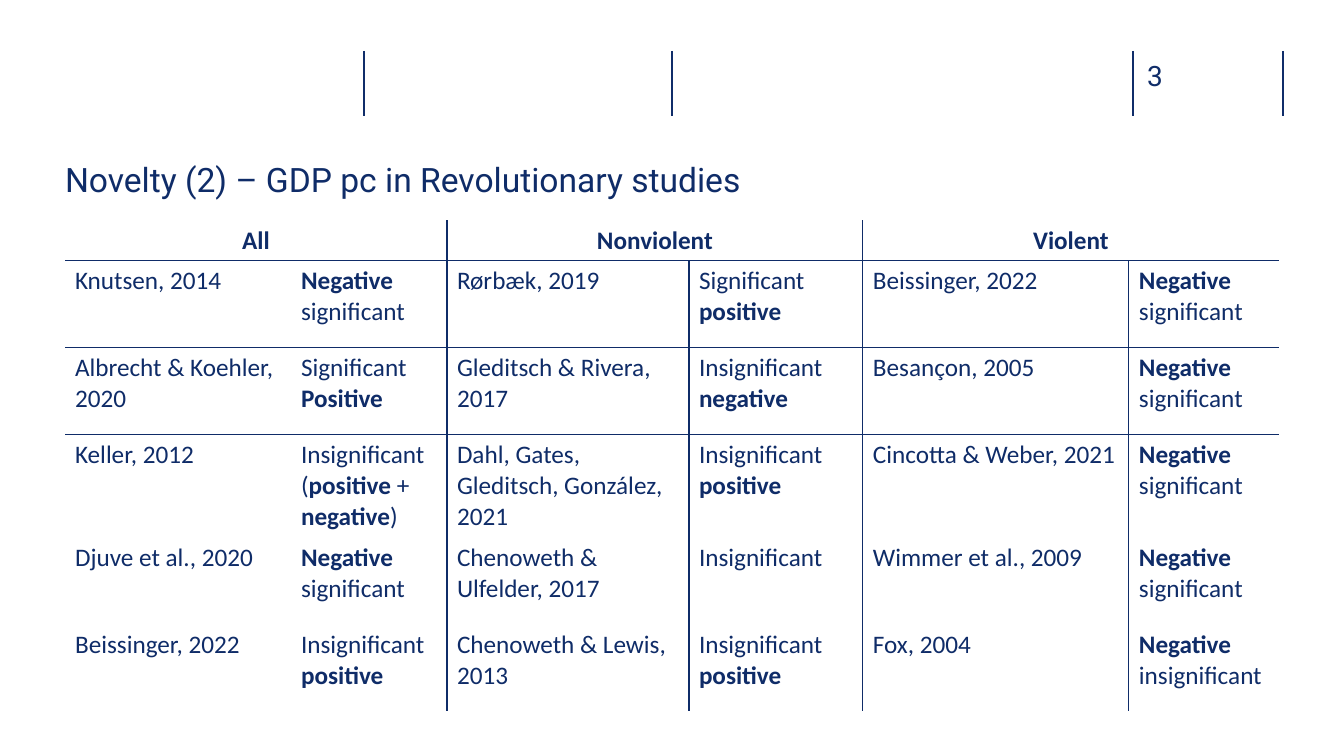
from lxml.etree import SubElement
from pptx import Presentation
from pptx.dml.color import RGBColor
from pptx.enum.shapes import MSO_CONNECTOR
from pptx.enum.text import MSO_ANCHOR, MSO_AUTO_SIZE, PP_ALIGN
from pptx.oxml.ns import qn
from pptx.util import Pt

PX = 914400 / 100.8
COLORS = {"text": "0F2C68", "master": "102D69"}
NO_STYLE = "{2D5ABB26-0587-4C30-8999-92F81FD0307C}"
COLUMN_WIDTHS = [226, 156, 242, 174, 266, 150]
HEADER_HEIGHT, ROW_HEIGHT = 39, 87
HEADERS = ["All", "Nonviolent", "Violent"]
STUDIES = [  # asterisks enclose bold words
    ["Knutsen, 2014", "*Negative* significant", "Rørbæk, 2019",
     "Significant *positive*", "Beissinger, 2022", "*Negative* significant"],
    ["Albrecht & Koehler, 2020", "Significant *Positive*", "Gleditsch & Rivera, 2017",
     "Insignificant\n*negative*", "Besançon, 2005", "*Negative* significant"],
    ["Keller, 2012", "Insignificant (*positive* + *negative*)",
     "Dahl, Gates, Gleditsch, González, 2021",
     "Insignificant *positive*", "Cincotta & Weber, 2021", "*Negative* significant"],
    ["Djuve et al., 2020", "*Negative* significant", "Chenoweth & Ulfelder, 2017",
     "Insignificant", "Wimmer et al., 2009", "*Negative* significant"],
    ["Beissinger, 2022", "Insignificant *positive*", "Chenoweth & Lewis, 2013",
     "Insignificant *positive*", "Fox, 2004", "*Negative* insignificant"],
]


def px(*lengths):
    return [round(length * PX) for length in lengths]


def write(frame, text, font_name, size, color, alignment=PP_ALIGN.LEFT):
    """Fill a text frame, one paragraph per line, with *bold* parts."""
    for index, line in enumerate(text.split("\n")):
        paragraph = frame.add_paragraph() if index else frame.paragraphs[0]
        paragraph.alignment = alignment
        for position, part in enumerate(line.split("*")):
            if part:
                run = paragraph.add_run()
                run.text = part
                run.font.name = font_name
                run.font.size = Pt(size)
                run.font.bold = position % 2 == 1
                run.font.color.rgb = RGBColor.from_string(COLORS[color])


presentation = Presentation()
presentation.slide_width, presentation.slide_height = px(1344, 756)
slide = presentation.slides.add_slide(presentation.slide_layouts[5])

# Header rules and page number
for x in [364, 672, 1133, 1283]:
    rule = slide.shapes.add_connector(MSO_CONNECTOR.STRAIGHT, *px(x, 51, x, 116))
    rule.line.color.rgb = RGBColor.from_string(COLORS["master"])
    rule.line.width = Pt(1)
    SubElement(rule.element.spPr, qn("a:effectLst"))
page_number = slide.shapes.add_textbox(*px(1147, 58, 74, 34))

# Title
title = slide.shapes.title
title.left, title.top, title.width, title.height = px(65, 159, 789, 86)
for shape in [page_number, title]:
    frame = shape.text_frame
    frame.margin_left = frame.margin_right = frame.margin_top = frame.margin_bottom = 0
    frame.word_wrap = True
    frame.auto_size = MSO_AUTO_SIZE.NONE
    frame.vertical_anchor = MSO_ANCHOR.TOP
write(page_number.text_frame, "3", "Roboto", 20, "master")
write(title.text_frame, "Novelty (2) – GDP pc in Revolutionary studies", "Roboto", 24, "text")

# Table
row_count, column_count = len(STUDIES) + 1, len(COLUMN_WIDTHS)
table_height = HEADER_HEIGHT + ROW_HEIGHT * len(STUDIES)
table = slide.shapes.add_table(
    row_count, column_count, *px(65, 220, sum(COLUMN_WIDTHS), table_height)).table
table.first_row = table.horz_banding = False
table._tbl.tblPr.find(qn("a:tableStyleId")).text = NO_STYLE
for column, width in zip(table.columns, COLUMN_WIDTHS):
    column.width = px(width)[0]
for index, row in enumerate(table.rows):
    row.height = px(ROW_HEIGHT if index else HEADER_HEIGHT)[0]

for index, header in enumerate(HEADERS):
    cell = table.cell(0, 2 * index)
    cell.merge(table.cell(0, 2 * index + 1))
    write(cell.text_frame, f"*{header}*", "Calibri", 18, "text", PP_ALIGN.CENTER)
for row, study in enumerate(STUDIES, 1):
    for column, text in enumerate(study):
        write(table.cell(row, column).text_frame, text, "Calibri", 18, "text")

# Cell borders: lines stand before these columns and above these rows
for row in range(row_count):
    ruled_columns = [2, 3, 4, 5] if row else [2, 4]
    ruled_rows = [1, 2]
    for column in range(column_count):
        cell = table.cell(row, column)
        properties = cell._tc.get_or_add_tcPr()
        sides = {"a:lnL": column in ruled_columns, "a:lnR": column + 1 in ruled_columns,
                 "a:lnT": row in ruled_rows, "a:lnB": row + 1 in ruled_rows}
        for tag, ruled in sides.items():
            if ruled:
                border = SubElement(properties, qn(tag), w=str(Pt(1)))
                fill = SubElement(border, qn("a:solidFill"))
                SubElement(fill, qn("a:srgbClr"), val=COLORS["text"])
        cell.fill.background()

presentation.save("out.pptx")
